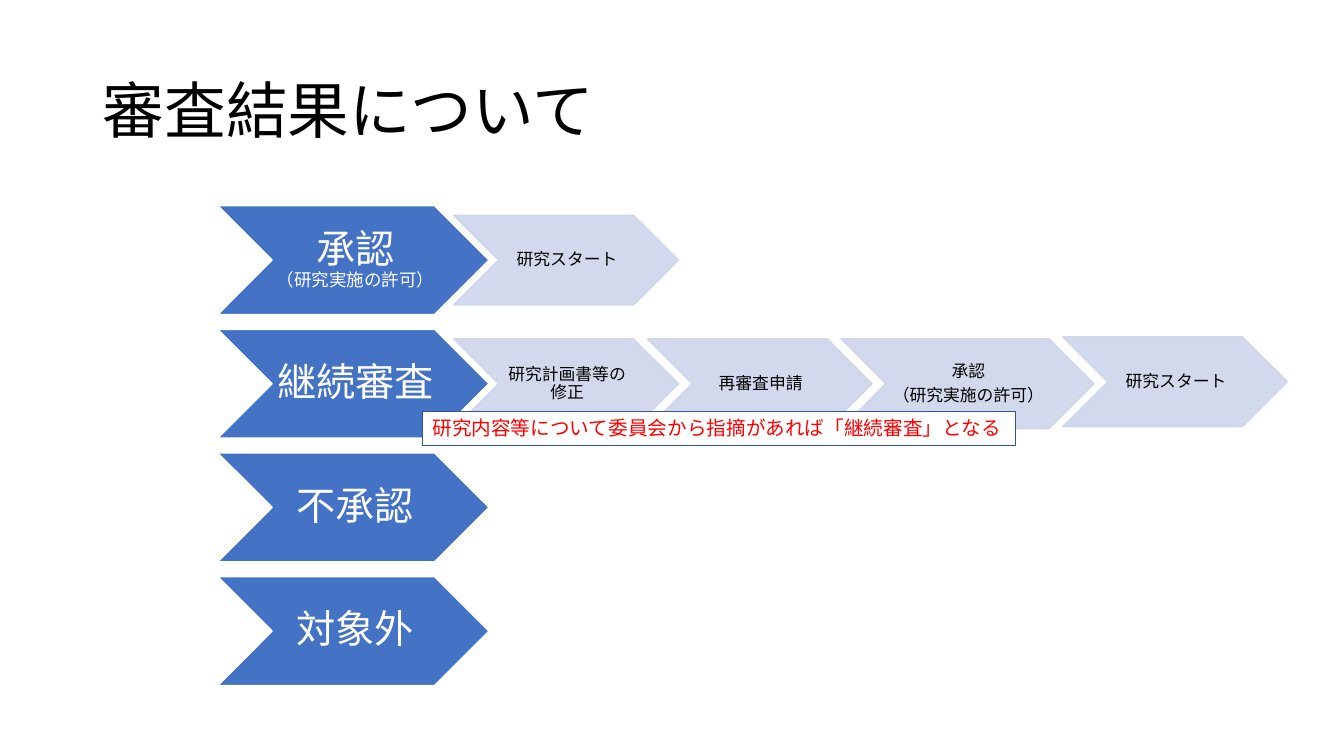
from lxml import etree
from pptx import Presentation
from pptx.dml.color import RGBColor
from pptx.enum.shapes import MSO_SHAPE
from pptx.enum.text import MSO_ANCHOR, MSO_AUTO_SIZE, PP_ALIGN
from pptx.oxml.ns import qn
from pptx.util import Inches, Pt

CHEVRON, RECTANGLE = MSO_SHAPE.CHEVRON, MSO_SHAPE.RECTANGLE
MIDDLE, TOP = MSO_ANCHOR.MIDDLE, MSO_ANCHOR.TOP
CENTER, LEFT = PP_ALIGN.CENTER, PP_ALIGN.LEFT

FONT = "Noto Sans CJK JP"
BLACK = RGBColor(0x00, 0x00, 0x00)
WHITE = RGBColor(0xFF, 0xFF, 0xFF)
RED = RGBColor(0xFF, 0x00, 0x00)
BLUE = RGBColor(0x44, 0x72, 0xC4)
PALE_BLUE = RGBColor(0xCF, 0xD5, 0xEA)
DARK_BLUE = RGBColor(0x32, 0x54, 0x91)

# Content: each result has a name, an optional small line, and its steps.
# A step has its paragraphs, its width and its vertical shift.
TITLE = "審査結果について"
RESULTS = [
    ("承認", "（研究実施の許可）", [(["研究スタート"], 2.23, 0)]),
    ("継続審査", None, [
        (["研究計画書等の修正"], 2.23, 0),
        (["再審査申請"], 2.23, 0),
        (["承認", "（研究実施の許可）"], 2.51, 0),
        (["研究スタート"], 2.23, -0.02),
    ]),
    ("不承認", None, []),
    ("対象外", None, []),
]
NOTE = "研究内容等について委員会から指摘があれば「継続審査」となる"

# Layout in inches
RESULT_LEFT, RESULT_TOP, RESULT_WIDTH, RESULT_HEIGHT = 2.16, 2.04, 2.69, 1.08
ROW_PITCH = 1.227
STEP_LEFT, STEP_HEIGHT, STEP_OVERLAP = 4.5, 0.89, 0.31


def write(shape, paragraphs, size, color, align=CENTER, anchor=MIDDLE,
          insets=None, line_spacing=None, space_after=0):
    """Each paragraph is a list of (text, size) lines; size None is the default."""
    frame = shape.text_frame
    frame.word_wrap = True
    frame.vertical_anchor = anchor
    if insets:
        (frame.margin_left, frame.margin_top,
         frame.margin_right, frame.margin_bottom) = map(Inches, insets)
    for i, lines in enumerate(paragraphs):
        paragraph = frame.paragraphs[0] if i == 0 else frame.add_paragraph()
        paragraph.alignment = align
        paragraph.line_spacing = line_spacing
        paragraph.space_after = Pt(space_after)
        for j, (text, line_size) in enumerate(lines):
            if j:
                paragraph.add_line_break()
            run = paragraph.add_run()
            run.text = text
            run.font.size = Pt(line_size or size)
            run.font.name = FONT
            run.font.color.rgb = color
            east_asian = etree.SubElement(run.font._element, qn("a:ea"))
            east_asian.set("typeface", FONT)


def add_box(slide, kind, box, fill, line, line_width=1, alpha=None):
    shape = slide.shapes.add_shape(kind, *map(Inches, box))
    shape.shadow.inherit = False
    shape.fill.solid()
    shape.fill.fore_color.rgb = fill
    shape.line.color.rgb = line
    shape.line.width = Pt(line_width)
    if alpha:
        for color in shape._element.spPr.iter(qn("a:srgbClr")):
            etree.SubElement(color, qn("a:alpha")).set("val", str(alpha * 1000))
    return shape


def main():
    prs = Presentation()
    prs.slide_width, prs.slide_height = Inches(13.33), Inches(7.5)
    slide = prs.slides.add_slide(prs.slide_layouts[5])

    # Title
    title = slide.shapes.title
    title.left, title.top, title.width, title.height = map(
        Inches, (0.92, 0.4, 11.5, 1.45))
    write(title, [[(TITLE, None)]], 44, BLACK, align=LEFT, line_spacing=0.9)

    # Results, each followed by its steps
    for row, (name, detail, steps) in enumerate(RESULTS):
        top = RESULT_TOP + row * ROW_PITCH
        result = add_box(slide, CHEVRON,
                         (RESULT_LEFT, top, RESULT_WIDTH, RESULT_HEIGHT), BLUE, WHITE)
        lines = [(name, None)] + ([(detail, 12.5)] if detail else [])
        write(result, [lines], 28, WHITE,
              insets=(0.04, 0.02, 0, 0.02), line_spacing=0.9)

        left = STEP_LEFT
        step_top = top + (RESULT_HEIGHT - STEP_HEIGHT) / 2
        for texts, width, shift in steps:
            step = add_box(slide, CHEVRON, (left, step_top + shift, width, STEP_HEIGHT),
                           PALE_BLUE, PALE_BLUE, alpha=90)
            write(step, [[(text, None)] for text in texts], 12, BLACK,
                  insets=(0.02, 0.01, 0, 0.01), line_spacing=0.9, space_after=4.2)
            left += width - STEP_OVERLAP

    # Note on continued review
    note = add_box(slide, RECTANGLE, (4.19, 4.08, 5.88, 0.34), WHITE, DARK_BLUE, 0.75)
    write(note, [[(NOTE, None)]], 14, RED, align=LEFT, anchor=TOP)
    note.text_frame.auto_size = MSO_AUTO_SIZE.SHAPE_TO_FIT_TEXT

    prs.save("out.pptx")


if __name__ == "__main__":
    main()
